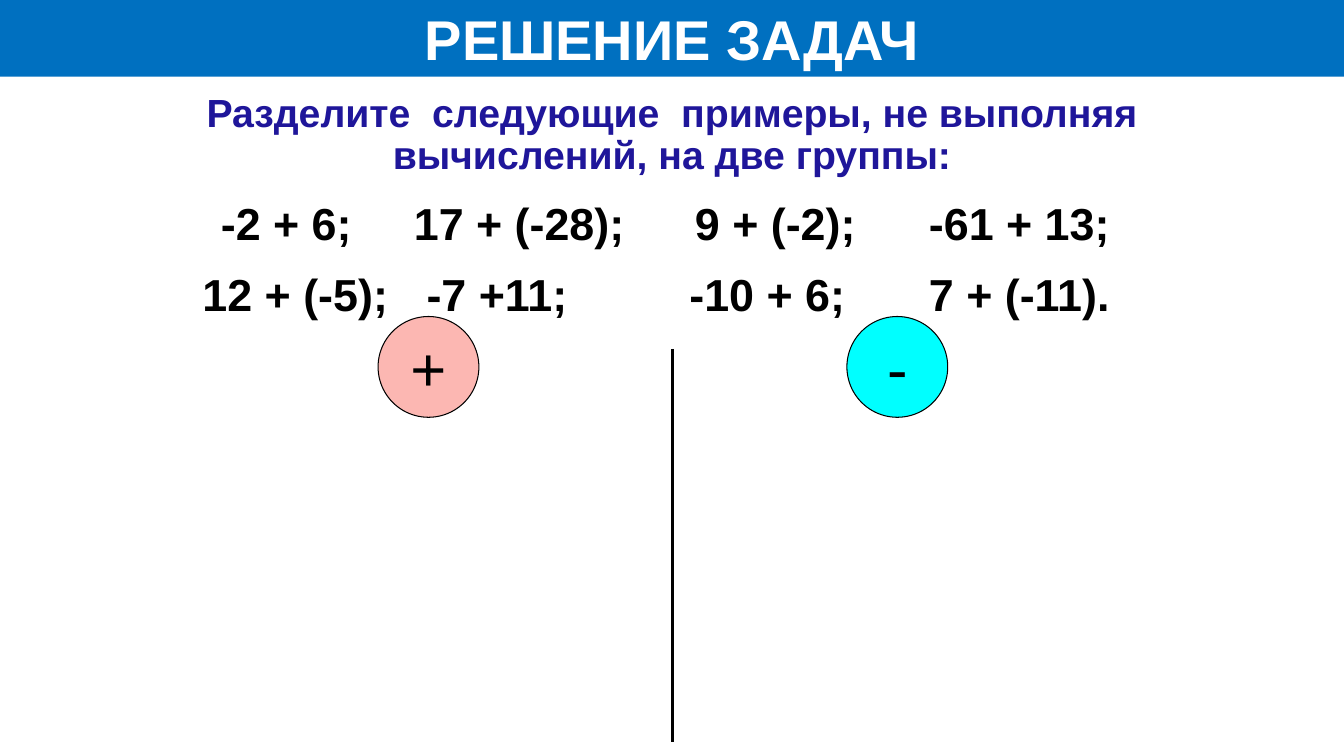
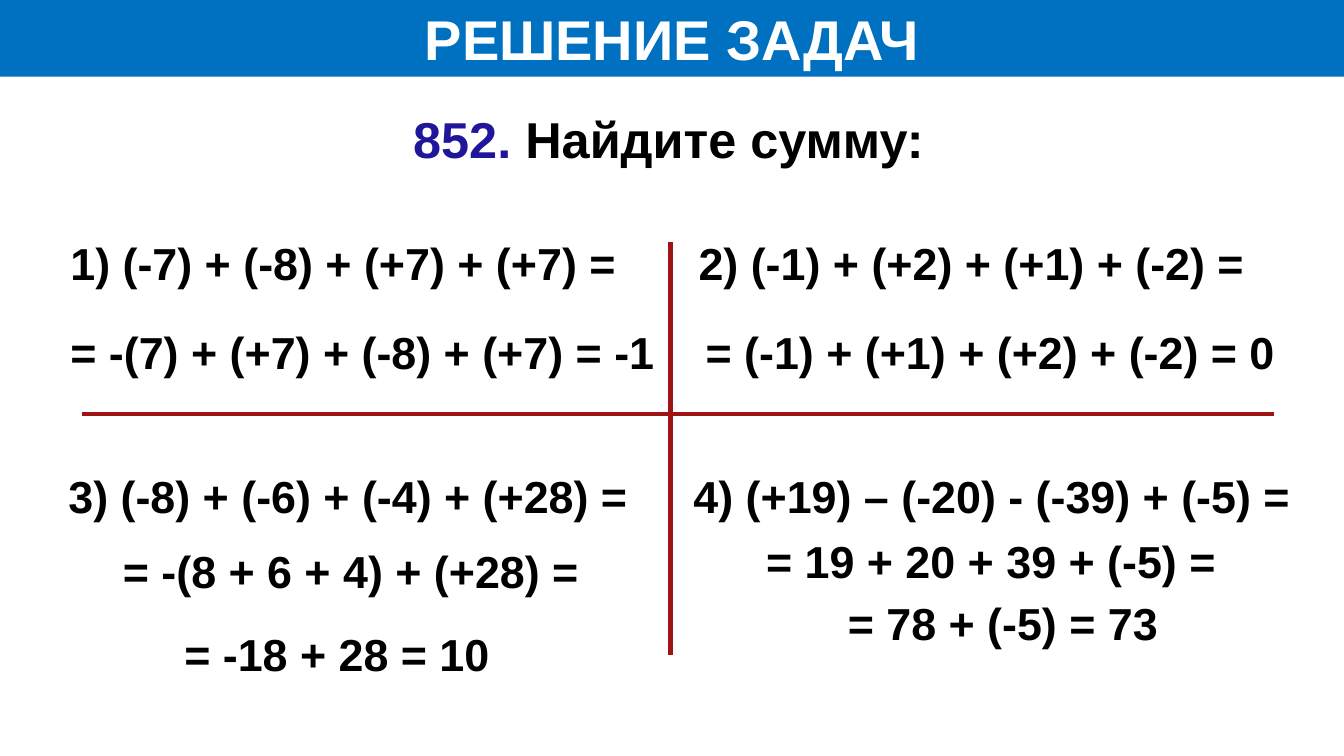
from lxml.etree import SubElement
from pptx import Presentation
from pptx.dml.color import RGBColor
from pptx.enum.shapes import MSO_CONNECTOR, MSO_SHAPE
from pptx.enum.text import MSO_ANCHOR, PP_ALIGN
from pptx.oxml.ns import qn
from pptx.util import Inches, Pt

SLIDE_WIDTH, SLIDE_HEIGHT = 13.33, 7.5
FONT = "Arial"
COLORS = {
    "band": "0070C0",
    "white": "FFFFFF",
    "black": "000000",
    "accent": "1F169A",
    "plus": "FCB7B2",
    "minus": "00FFFF",
    "divider": "9C1414",
}


def color(name):
    return RGBColor.from_string(COLORS[name])


class Deck:
    """Holds the shared style and the slide being filled."""

    def __init__(self):
        self.presentation = Presentation()
        self.presentation.slide_width = Inches(SLIDE_WIDTH)
        self.presentation.slide_height = Inches(SLIDE_HEIGHT)
        self.slide = None

    def new_slide(self, title):
        blank = self.presentation.slide_layouts[6]
        self.slide = self.presentation.slides.add_slide(blank)
        band = self.shape(MSO_SHAPE.RECTANGLE, 0, 0, SLIDE_WIDTH, 0.76, "band")
        self.fill_text(band, [(title, "white")], 40, PP_ALIGN.CENTER)

    def fill_text(self, shape, parts, size, align, bold=True, spacing=None):
        """Fill a shape with one paragraph of (text, colour) parts."""
        paragraph = shape.text_frame.paragraphs[0]
        paragraph.alignment = align
        if spacing:
            paragraph.line_spacing = spacing
        for text, color_name in parts:
            run = paragraph.add_run()
            run.text = text
            run.font.name = FONT
            run.font.size = Pt(size)
            run.font.bold = bold
            run.font.color.rgb = color(color_name)

    def shape(self, kind, left, top, width, height, fill, outline=None):
        shape = self.slide.shapes.add_shape(
            kind, Inches(left), Inches(top), Inches(width), Inches(height))
        shape.shadow.inherit = False
        shape.fill.solid()
        shape.fill.fore_color.rgb = color(fill)
        if outline:
            shape.line.color.rgb = color(outline)
            shape.line.width = Pt(0.75)
        else:
            shape.line.fill.background()
        shape.text_frame.vertical_anchor = MSO_ANCHOR.MIDDLE
        return shape

    def text(self, parts, left, top, width, height, size=32,
             align=PP_ALIGN.LEFT, spacing=None):
        box = self.slide.shapes.add_textbox(
            Inches(left), Inches(top), Inches(width), Inches(height))
        box.text_frame.word_wrap = True
        self.fill_text(box, parts, size, align, spacing=spacing)

    def sign(self, text, left, fill):
        circle = self.shape(MSO_SHAPE.OVAL, left, 3.14, 1, 1, fill, "black")
        circle.text_frame.word_wrap = False
        self.fill_text(circle, [(text, "black")], 44, PP_ALIGN.CENTER, bold=False)

    def line(self, x1, y1, x2, y2, color_name, width):
        line = self.slide.shapes.add_connector(
            MSO_CONNECTOR.STRAIGHT, Inches(x1), Inches(y1), Inches(x2), Inches(y2))
        line.line.color.rgb = color(color_name)
        line.line.width = Pt(width)
        SubElement(line._element.spPr, qn("a:effectLst"))


def add_grouping_slide(deck):
    deck.new_slide("РЕШЕНИЕ ЗАДАЧ")
    task = "Разделите  следующие  примеры, не выполняя вычислений, на две группы:"
    deck.text([(task, "accent")], 1.9, 0.88, 9.53, 0.92, 28, PP_ALIGN.CENTER, 0.9)

    # Each example is centred on its own x
    example_rows = {
        1.89: [("-2 + 6;", 2.84), ("17 + (-28);", 5.15),
               ("9 + (-2);", 7.69), ("-61 + 13;", 10.11)],
        2.6: [("12 + (-5);", 2.93), ("-7 +11;", 4.93),
              ("-10 + 6;", 7.61), ("7 + (-11).", 10.11)],
    }
    width = 2.64
    for top, examples in example_rows.items():
        for text, center in examples:
            deck.text([(text, "black")], center - width / 2, top, width, 0.71,
                      align=PP_ALIGN.CENTER)

    deck.sign("+", 3.75, "plus")
    deck.sign("-", 8.4, "minus")
    deck.line(6.67, 3.46, 6.67, 7.36, "black", 2.75)


def add_sums_slide(deck):
    deck.new_slide("РЕШЕНИЕ ЗАДАЧ")
    deck.text([("852. ", "accent"), ("Найдите сумму:", "black")],
              4, 1.02, 6.03, 0.71, 36)

    solution_lines = [
        ("1) (-7) + (-8) + (+7) + (+7) =", 0.6, 2.02),
        ("= -(7) + (+7) + (-8) + (+7) = -1", 0.6, 2.91),
        ("2) (-1) + (+2) + (+1) + (-2) =", 6.83, 2.02),
        ("= (-1) + (+1) + (+2) + (-2) = 0", 6.9, 2.91),
        ("3) (-8) + (-6) + (-4) + (+28) =", 0.58, 4.33),
        ("= -(8 + 6 + 4) + (+28) =", 1.12, 5.08),
        ("= -18 + 28 = 10", 1.73, 5.9),
        ("4) (+19) – (-20) - (-39) + (-5) =", 6.78, 4.33),
        ("= 19 + 20 + 39 + (-5) =", 7.5, 4.98),
        ("= 78 + (-5) = 73", 8.31, 5.59),
    ]
    for text, left, top in solution_lines:
        width = min(6.3, SLIDE_WIDTH - left)
        deck.text([(text, "black")], left, top, width, 0.81, spacing=1.5)

    deck.line(6.65, 2.4, 6.65, 6.5, "divider", 3)
    deck.line(0.81, 4.11, 12.64, 4.11, "divider", 3)


def main():
    deck = Deck()
    add_grouping_slide(deck)
    add_sums_slide(deck)
    deck.presentation.save("out.pptx")


if __name__ == "__main__":
    main()
